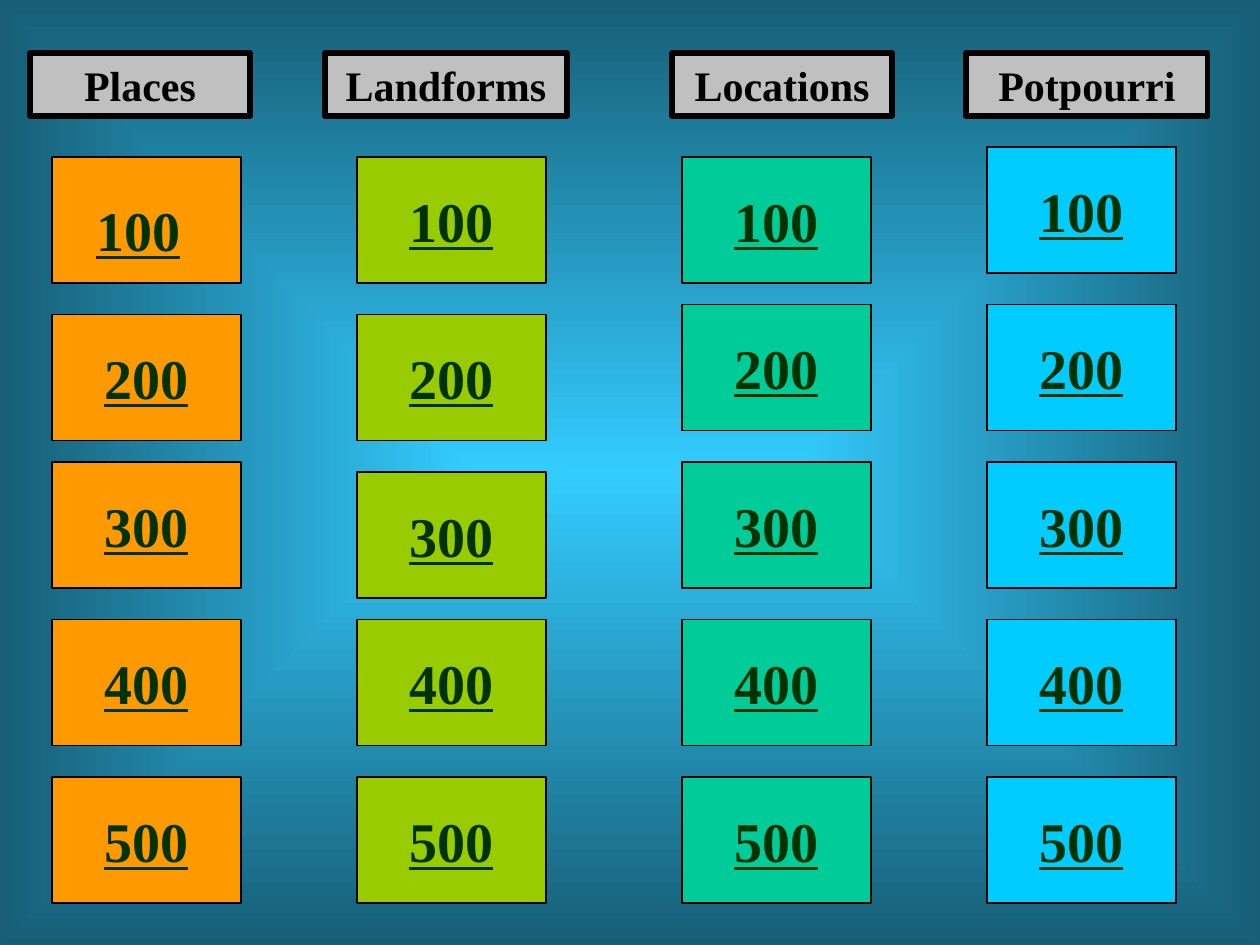
from lxml.etree import SubElement
from pptx import Presentation
from pptx.dml.color import RGBColor
from pptx.enum.shapes import MSO_SHAPE
from pptx.enum.text import MSO_ANCHOR, MSO_AUTO_SIZE, PP_ALIGN
from pptx.oxml.ns import qn
from pptx.util import Pt

COLORS = {
    "center": "33CCFF", "edge": "175E76", "header": "C0C0C0", "black": "000000",
    "points": "003300", "orange": "FF9900", "lime": "99CC00",
    "teal": "00CC99", "cyan": "00CCFF",
}
FONT = "Times New Roman"
POINTS = ["100", "200", "300", "400", "500"]
# Header text, header left, header width, button left, button color, lowered buttons
CATEGORIES = [
    ("Places", 30, 220, 52, "orange", {"100", "200"}),
    ("Landforms", 325, 242, 357, "lime", {"100", "200", "300"}),
    ("Locations", 672, 220, 682, "teal", {"100"}),
    ("Potpourri", 966, 242, 987, "cyan", set()),
]
HEADER_TOP, HEADER_HEIGHT = 53, 63
BUTTON_WIDTH, BUTTON_HEIGHT = 189, 126
FIRST_TOP, LAST_TOP, LOWERED_BY = 147, 777, 10
ROW_PITCH = (LAST_TOP - FIRST_TOP) / (len(POINTS) - 1)
LOOSE_LABEL = ("100", (84, 189, 116, 79))
SLIDE_SIZE = (1260, 945)
EMU_PER_PX = 914400 / 126


def px(length):
    return round(length * EMU_PER_PX)


def rgb(name):
    return RGBColor.from_string(COLORS[name])


def paint_background(slide):
    """Fill the slide with a gradient that spreads from its center."""
    fill = slide.background.fill
    fill.gradient()
    for stop, name in zip(fill.gradient_stops, ("center", "edge")):
        stop.color.rgb = rgb(name)
    gradient = slide.element.find(".//" + qn("a:gradFill"))
    gradient.remove(gradient.find(qn("a:lin")))
    shading = SubElement(gradient, qn("a:path"), path="shape")
    SubElement(shading, qn("a:fillToRect"), l="50000", t="50000", r="50000", b="50000")


def add_box(slide, preset, box, fill, line_width):
    shape = slide.shapes.add_shape(preset, *map(px, box))
    shape.shadow.inherit = False
    shape.fill.solid()
    shape.fill.fore_color.rgb = rgb(fill)
    shape.line.color.rgb = rgb("black")
    shape.line.width = Pt(line_width)
    return shape


def write(shape, text, size, color, align, underline=None):
    paragraph = shape.text_frame.paragraphs[0]
    paragraph.alignment = align
    run = paragraph.add_run()
    run.text = text
    run.font.name = FONT
    run.font.size = Pt(size)
    run.font.bold = True
    run.font.underline = underline
    run.font.color.rgb = rgb(color)


def fit_to_text(shape):
    """Grow with the text, with half a line of space above it."""
    frame = shape.text_frame
    frame.word_wrap = True
    frame.auto_size = MSO_AUTO_SIZE.SHAPE_TO_FIT_TEXT
    frame.vertical_anchor = MSO_ANCHOR.TOP
    properties = frame.paragraphs[0]._p.get_or_add_pPr()
    space = SubElement(properties, qn("a:spcBef"))
    SubElement(space, qn("a:spcPct"), val="50000")


def add_header(slide, text, left, width):
    box = (left, HEADER_TOP, width, HEADER_HEIGHT)
    header = add_box(slide, MSO_SHAPE.RECTANGLE, box, "header", 3)
    write(header, text, 24, "black", PP_ALIGN.CENTER)
    fit_to_text(header)


def add_button(slide, left, top, color, text):
    box = (left, top, BUTTON_WIDTH, BUTTON_HEIGHT)
    button = add_box(slide, MSO_SHAPE.ACTION_BUTTON_CUSTOM, box, color, 0.75)
    if text:
        button.text_frame.word_wrap = False
        button.text_frame.vertical_anchor = MSO_ANCHOR.MIDDLE
        write(button, text, 32, "points", PP_ALIGN.CENTER, underline=True)


def main():
    presentation = Presentation()
    presentation.slide_width, presentation.slide_height = map(px, SLIDE_SIZE)
    slide = presentation.slides.add_slide(presentation.slide_layouts[6])
    paint_background(slide)

    for column, (name, left, width, button_left, color, lowered) in enumerate(CATEGORIES):
        add_header(slide, name, left, width)
        for row, points in enumerate(POINTS):
            top = FIRST_TOP + row * ROW_PITCH + LOWERED_BY * (points in lowered)
            has_loose_label = column == row == 0
            add_button(slide, button_left, top, color, None if has_loose_label else points)

    text, box = LOOSE_LABEL
    label = slide.shapes.add_textbox(*map(px, box))
    write(label, text, 32, "points", PP_ALIGN.LEFT, underline=True)
    fit_to_text(label)

    presentation.save("out.pptx")


if __name__ == "__main__":
    main()
